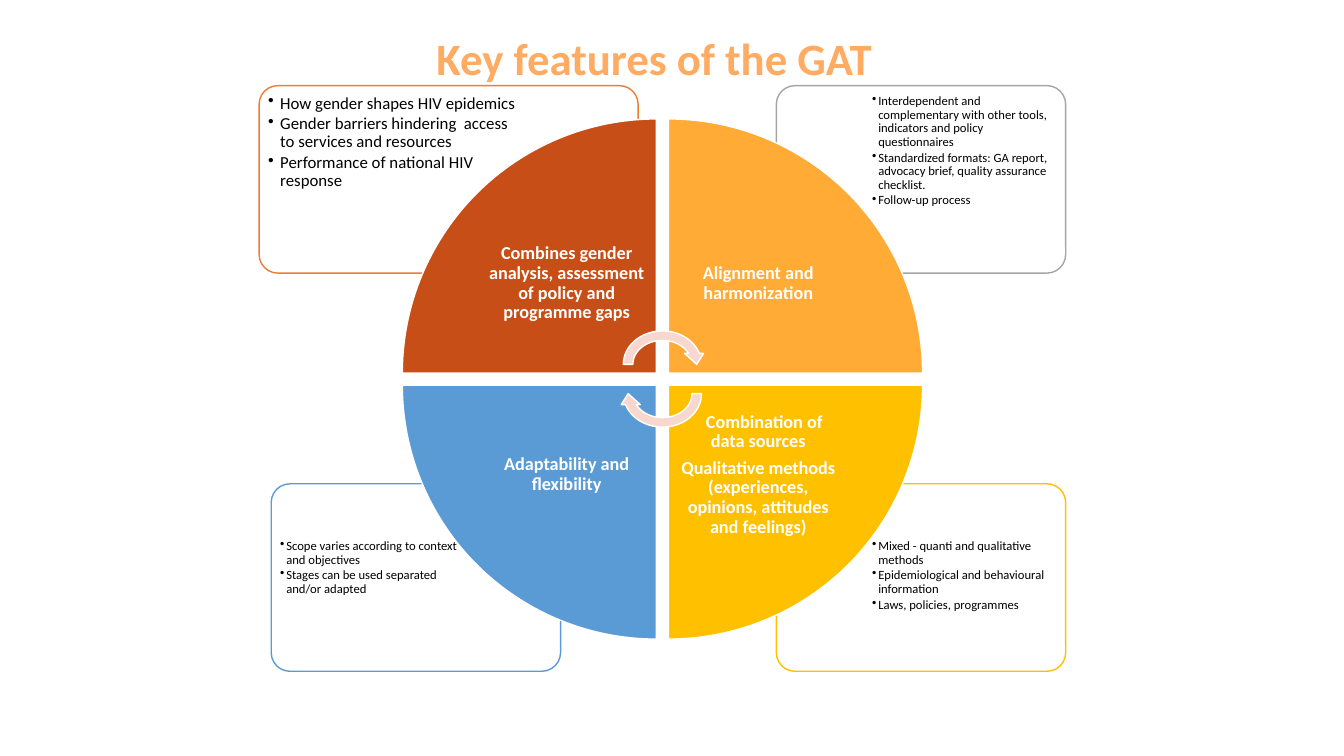
from collections import namedtuple
from dataclasses import dataclass

from lxml import etree
from pptx import Presentation
from pptx import util as u
from pptx.dml.color import RGBColor
from pptx.enum import shapes, text
from pptx.oxml import ns

Box = namedtuple("Box", "left top width height")


@dataclass(frozen=True)
class Theme:
    font: str = "Calibri"
    title: str = "FFAB62"
    ink: str = "000000"
    paper: str = "FFFFFF"
    arrow: str = "F8D7CE"
    title_size: int = 32
    label_size: int = 13
    large_bullet: int = 12
    small_bullet: int = 9


THEME = Theme()
Quarter = namedtuple("Quarter", "fill border callout bullet_size bullets labels")

# Clockwise from the top left
QUARTERS = [
    Quarter("C84E17", "ED7D31", Box(2.57, 0.85, 3.76, 1.86), THEME.large_bullet,
            ["How gender shapes HIV epidemics",
             "Gender barriers hindering  access to services and resources",
             "Performance of national HIV response"],
            ["Combines gender analysis, assessment of policy and programme gaps"]),
    Quarter("FFAB35", "A5A5A5", Box(7.7, 0.85, 2.87, 1.86), THEME.small_bullet,
            ["Interdependent and complementary with other tools, indicators and "
             "policy questionnaires",
             "Standardized formats: GA report, advocacy brief, quality assurance checklist.",
             "Follow-up process"],
            ["Alignment and harmonization"]),
    Quarter("FFC000", "FFC000", Box(7.7, 4.8, 2.87, 1.86), THEME.small_bullet,
            ["Mixed - quanti and qualitative methods",
             "Epidemiological and behavioural information",
             "Laws, policies, programmes"],
            ["Combination of data sources",
             "Qualitative methods (experiences, opinions, attitudes and feelings)"]),
    Quarter("5B9BD5", "5B9BD5", Box(2.69, 4.8, 2.87, 1.86), THEME.small_bullet,
            ["Scope varies according to context and objectives",
             "Stages can be used separated and/or adapted"],
            ["Adaptability and flexibility"]),
]


def inches(box):
    return [u.Inches(value) for value in box]


def add_text(page, box, lines, size, color, bold=False, align=text.PP_ALIGN.LEFT,
             anchor=text.MSO_ANCHOR.TOP, inset=0.05, spacing=0.9, after=0.0,
             hanging=0.0, first_indent=0.0):
    """Place one paragraph per line; a hanging indent also gives bullets."""
    frame = page.shapes.add_textbox(*inches(box)).text_frame
    frame.word_wrap = True
    frame.vertical_anchor = anchor
    frame.margin_left = frame.margin_right = u.Inches(inset)
    frame.margin_top = frame.margin_bottom = u.Inches(inset)
    for index, line in enumerate(lines):
        para = frame.paragraphs[0] if index == 0 else frame.add_paragraph()
        para.alignment = align
        para.line_spacing = spacing
        para.space_after = u.Pt(size * after)
        span = para.add_run()
        span.text = line
        span.font.name = THEME.font
        span.font.size = u.Pt(size)
        span.font.bold = bold
        span.font.color.rgb = RGBColor.from_string(color)
        properties = para._p.get_or_add_pPr()
        if hanging:
            para.level = 1
            properties.set("marL", str(u.Inches(hanging)))
            properties.set("indent", str(-u.Inches(hanging)))
            etree.SubElement(properties, ns.qn("a:buChar")).set("char", "•")
        elif first_indent and index == 0:
            properties.set("indent", str(u.Inches(first_indent)))


def add_figure(page, kind, box, fill, line, rotation=0):
    figure = page.shapes.add_shape(kind, *inches(box))
    figure.shadow.inherit = False
    figure.fill.solid()
    figure.fill.fore_color.rgb = RGBColor.from_string(fill)
    figure.line.color.rgb = RGBColor.from_string(line)
    figure.line.width = u.Pt(1)
    figure.rotation = rotation
    return figure


def draw_title(page, box):
    add_text(page, box, ["Key features of the GAT"], THEME.title_size, THEME.title,
             bold=True, inset=0.1, spacing=1.0)


def draw_callout(page, box, quarter, on_right, on_bottom):
    """Rounded frame with its bullets in the corner away from the wheel."""
    frame = add_figure(page, shapes.MSO_SHAPE.ROUNDED_RECTANGLE, box,
                       THEME.paper, quarter.border)
    frame.adjustments[0] = 0.1
    pad = 0.04
    area = Box(box.left + pad + on_right * 0.3 * box.width,
               box.top + pad + on_bottom * 0.25 * box.height,
               0.7 * box.width - 2 * pad, 0.75 * box.height - 2 * pad)
    add_text(page, area, quarter.bullets, quarter.bullet_size, THEME.ink, after=0.15,
             hanging=0.12 if quarter.bullet_size == THEME.large_bullet else 0.06)


def draw_wedge(page, box, quarter, on_right, on_bottom, rotation):
    """Quarter of the wheel with its label against the centre."""
    add_figure(page, shapes.MSO_SHAPE.PIE_WEDGE, box, quarter.fill, THEME.paper, rotation)
    side = 1.78
    area = Box(box.left + (not on_right) * (box.width - side),
               box.top + (not on_bottom) * (box.height - side), side, side)
    add_text(page, area, quarter.labels, THEME.label_size, THEME.paper, bold=True,
             align=text.PP_ALIGN.CENTER, anchor=text.MSO_ANCHOR.MIDDLE,
             inset=0.1, after=0.35, first_indent=0.12 if len(quarter.labels) > 1 else 0)


def draw_wheel(page, box):
    radius, pitch = 2.52, box.width - 2.52
    places = [(False, False), (True, False), (True, True), (False, True)]
    # Callouts lie behind the wedges
    for quarter, place in zip(QUARTERS, places):
        draw_callout(page, quarter.callout, quarter, *place)
    for index, (quarter, (on_right, on_bottom)) in enumerate(zip(QUARTERS, places)):
        wedge = Box(box.left + on_right * pitch, box.top + on_bottom * pitch, radius, radius)
        draw_wedge(page, wedge, quarter, on_right, on_bottom, 90 * index)
    # Turning arrows at the centre
    width, height, shift = 0.87, 0.76, 0.29
    left = box.left + (box.width - width) / 2
    top = box.top + (box.height - height - shift) / 2
    for index in range(2):
        add_figure(page, shapes.MSO_SHAPE.CIRCULAR_ARROW,
                   Box(left, top + index * shift, width, height),
                   THEME.arrow, THEME.paper, 180 * index)


def main():
    deck = Presentation()
    deck.slide_width, deck.slide_height = u.Inches(13.33), u.Inches(7.5)
    page = deck.slides.add_slide(deck.slide_layouts[6])
    draw_title(page, Box(4.23, 0.21, 5.59, 0.64))
    draw_wheel(page, Box(3.99, 1.18, 5.16, 5.16))
    deck.save("out.pptx")


if __name__ == "__main__":
    main()
